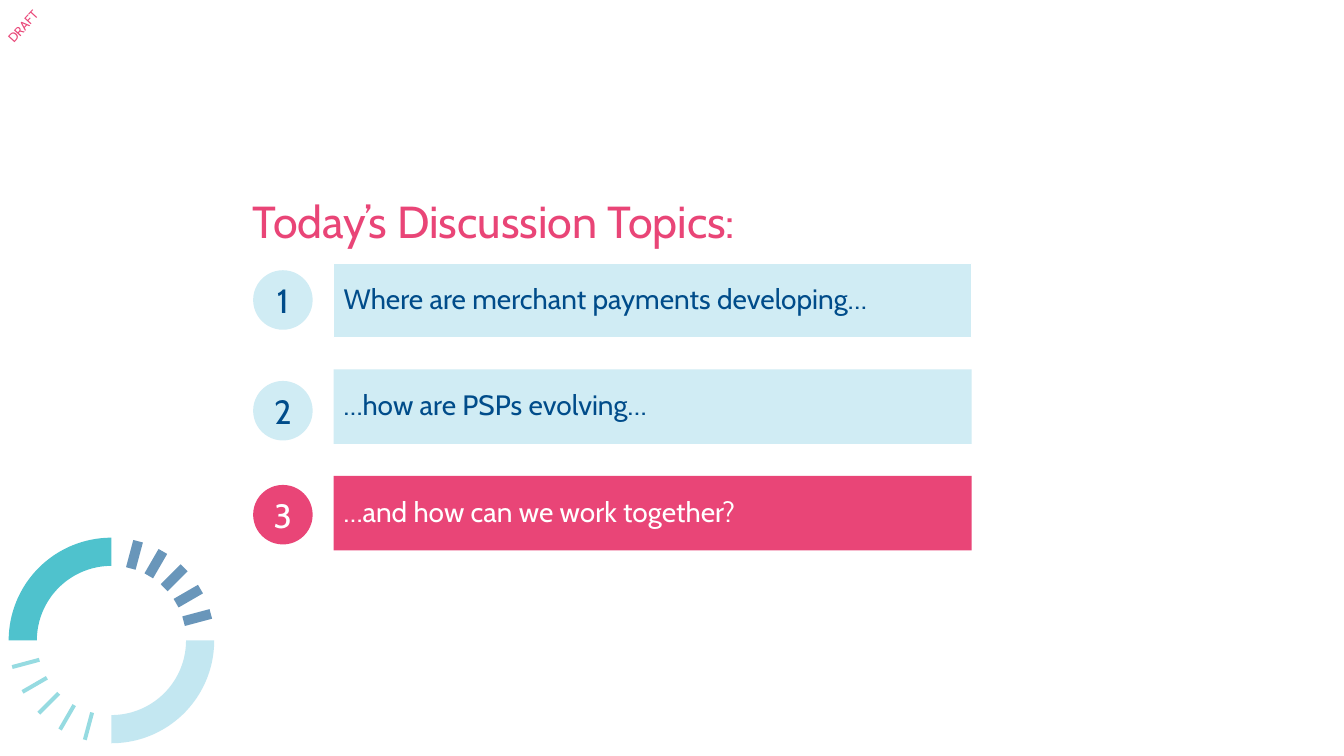
import math

from lxml import etree
from pptx import Presentation
from pptx import util as u
from pptx.dml.color import RGBColor
from pptx.enum import shapes, text
from pptx.oxml.ns import qn

FONT = "Cabin"
PINK, PALE, NAVY, WHITE = "E94577", "D0ECF4", "004C8A", "FFFFFF"
TEAL, SKY, BLUE = "00A8B8", "8BD0E4", "004D8A"

# Ring measures in centimetres
CENTRE_X, CENTRE_Y = 2.81, 16.14
OUTER, INNER = 2.59, 1.88

TOPICS = [
    ("Where are merchant payments developing…", 6.81, PALE, NAVY),
    ("…how are PSPs evolving…", 9.6, PALE, NAVY),
    ("…and how can we work together?", 12.22, PINK, WHITE),
]


def set_fill(target, colour, opacity=100):
    target.fill.solid()
    target.fill.fore_color.rgb = RGBColor.from_string(colour)
    if opacity < 100:
        solid = target._element.spPr.find(qn("a:solidFill"))
        etree.SubElement(solid[0], qn("a:alpha"), val=str(opacity * 1000))


def set_text(shape, words, size, colour, align):
    frame = shape.text_frame
    frame.text = words
    frame.vertical_anchor = text.MSO_ANCHOR.MIDDLE
    para = frame.paragraphs[0]
    para.alignment = align
    font = para.runs[0].font
    font.name = FONT
    font.size = u.Pt(size)
    font.color.rgb = RGBColor.from_string(colour)


def add_text(page, place, words, size, align, wrap=True):
    box = page.shapes.add_textbox(*map(u.Cm, place))
    set_text(box, words, size, PINK, align)
    box.text_frame.word_wrap = wrap
    return box


def add_block(page, kind, place, colour):
    block = page.shapes.add_shape(kind, *map(u.Cm, place))
    block.shadow.inherit = False
    set_fill(block, colour)
    block.line.fill.background()
    return block


def ring_point(radius, degrees, offset=0):
    """Point at a clockwise angle from the top, shifted sideways by offset."""
    sine, cosine = math.sin(math.radians(degrees)), math.cos(math.radians(degrees))
    return (u.Cm(CENTRE_X + radius * sine + offset * cosine),
            u.Cm(CENTRE_Y - radius * cosine + offset * sine))


def add_outline(page, points, colour, opacity):
    builder = page.shapes.build_freeform(*points[0])
    builder.add_line_segments(points[1:], close=True)
    outline = builder.convert_to_shape()
    outline.shadow.inherit = False
    set_fill(outline, colour, opacity)
    outline.line.fill.background()


def add_quarter(page, start, colour, opacity):
    angles = range(start, start + 91, 2)
    angles = [*angles, start + 90]
    outer = [ring_point(OUTER, angle) for angle in angles]
    inner = [ring_point(INNER, angle) for angle in reversed(angles)]
    add_outline(page, outer + inner, colour, opacity)


def add_ticks(page, start, width, colour, opacity):
    """Five radial bars, 15 degrees apart, inside the quarter from start."""
    half = width / 2
    for angle in range(start + 15, start + 90, 15):
        corners = [(INNER, -half), (OUTER, -half), (OUTER, half), (INNER, half)]
        points = [ring_point(radius, angle, offset) for radius, offset in corners]
        add_outline(page, points, colour, opacity)


def add_topic(page, index, words, circle_top, fill, colour):
    circle = add_block(page, shapes.MSO_SHAPE.OVAL, (6.38, circle_top, 1.5, 1.5), fill)
    set_text(circle, str(index + 1), 24, colour, text.PP_ALIGN.CENTER)

    bar_top = 6.63 + 2.68 * index
    bar = add_block(page, shapes.MSO_SHAPE.RECTANGLE, (8.41, bar_top, 16.08, 1.88), fill)
    set_text(bar, words, 20, colour, text.PP_ALIGN.LEFT)
    bar.text_frame.margin_top = 0
    bar.text_frame.margin_bottom = u.Cm(0.1)
    return bar


def main():
    deck = Presentation()
    deck.slide_width, deck.slide_height = u.Cm(33.87), u.Cm(19.05)
    page = deck.slides.add_slide(deck.slide_layouts[6])

    draft = add_text(page, (-0.43, 0.15, 2.01, 1.04), "DRAFT", 9,
                     text.PP_ALIGN.CENTER, wrap=False)
    draft.rotation = 312.3

    add_quarter(page, 270, TEAL, 69)
    add_quarter(page, 90, SKY, 51)
    add_ticks(page, 0, 0.25, BLUE, 59)
    add_ticks(page, 180, 0.1, TEAL, 41)

    bars = [add_topic(page, index, *topic) for index, topic in enumerate(TOPICS)]
    bars[0].line.color.rgb = RGBColor.from_string(WHITE)
    bars[0].line.width = u.Pt(0.75)

    add_text(page, (6.12, 4.29, 13.31, 2.54), "Today’s Discussion Topics:", 32,
             text.PP_ALIGN.LEFT)
    deck.save("out.pptx")


if __name__ == "__main__":
    main()
